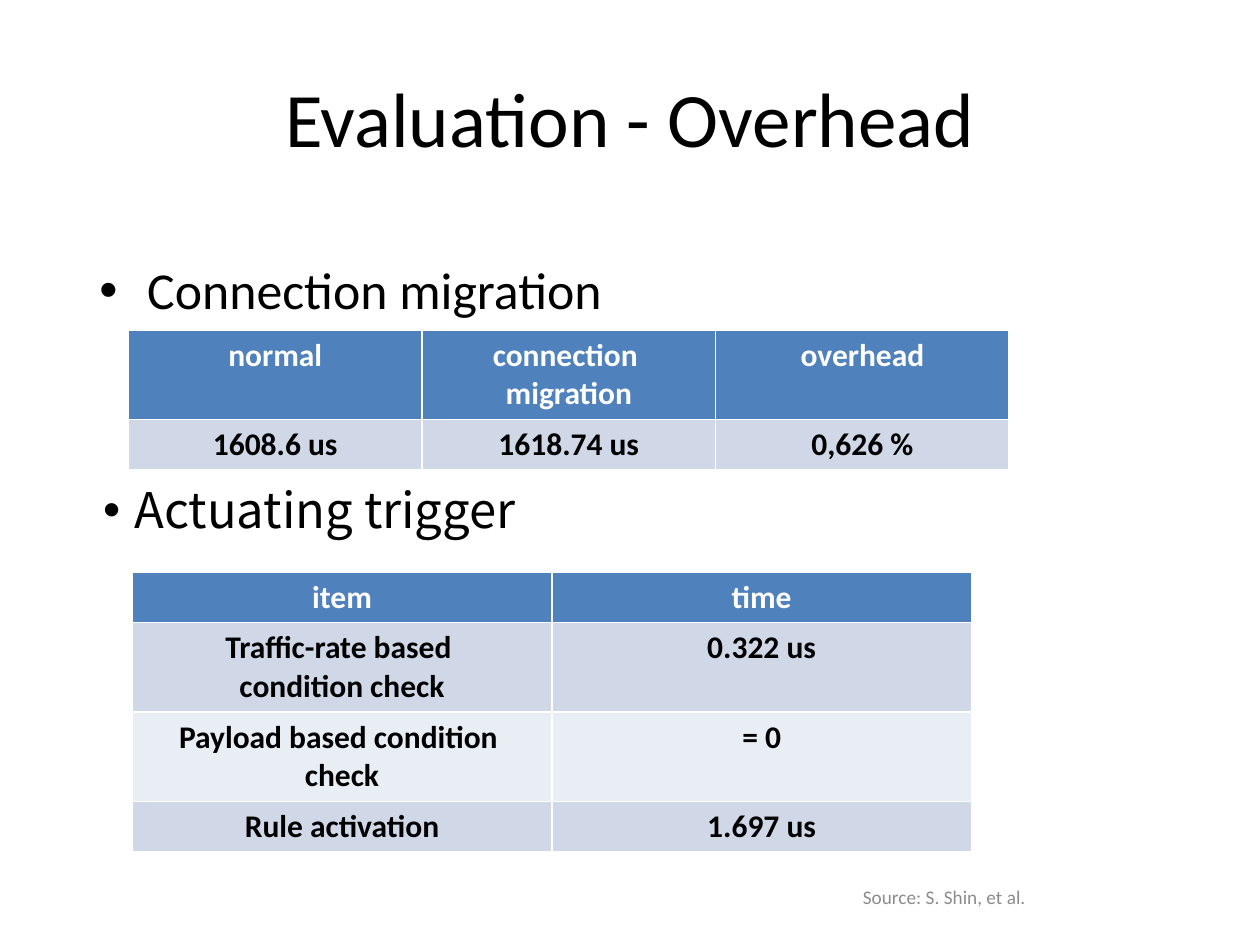
from dataclasses import dataclass

from lxml.etree import SubElement
from pptx import Presentation
from pptx.dml.color import RGBColor
from pptx.enum.text import MSO_ANCHOR as Anchor, PP_ALIGN as Align
from pptx.oxml.ns import qn
from pptx.util import Inches, Pt


@dataclass(frozen=True)
class Theme:
    font: str = "Calibri"
    trigger_font: str = "Noto Sans CJK KR"
    black: str = "000000"
    white: str = "FFFFFF"
    gray: str = "8C8C8C"
    header: str = "4F81BD"
    bands: tuple = ("D0D8E8", "E9EDF4")
    title: float = 44
    migration: float = 29.6
    trigger: float = 28
    cell: float = 18
    source: float = 11


theme = Theme()


def add_span(para, text, size, color, font=theme.font, bold=False):
    span = para.add_run()
    span.text = text
    span.font.name = font
    span.font.size = Pt(size)
    span.font.bold = bold
    span.font.color.rgb = RGBColor.from_string(color)


def add_text_box(left, top, width, height, anchor=Anchor.TOP):
    """Add a wrapping text box and return its first paragraph."""
    box = page.shapes.add_textbox(Inches(left), Inches(top), Inches(width), Inches(height))
    box.text_frame.word_wrap = True
    box.text_frame.vertical_anchor = anchor
    return box.text_frame.paragraphs[0]


deck = Presentation()
deck.slide_width, deck.slide_height = Inches(10), Inches(7.5)
page = deck.slides.add_slide(deck.slide_layouts[6])

# Title and source
para = add_text_box(0.5, 0.3, 9, 1.25, Anchor.MIDDLE)
para.alignment = Align.CENTER
add_span(para, "Evaluation - Overhead", theme.title, theme.black)

para = add_text_box(6.75, 6.92, 2.67, 0.4, Anchor.MIDDLE)
add_span(para, "Source: S. Shin, et al.", theme.source, theme.gray)

# Bulleted headings: text, left, top, indent, line spacing, size, font
headings = [
    ("Connection migration", 0.69, 2, 0.38, 1, theme.migration, theme.font),
    ("Actuating trigger", 0.72, 3.81, 0.25, 0.9, theme.trigger, theme.trigger_font),
]
for text, left, top, indent, spacing, size, font in headings:
    para = add_text_box(left, top, 7.95, 0.55)
    para.line_spacing = spacing
    properties = para._p.get_or_add_pPr()
    properties.set("marL", str(Inches(indent)))
    properties.set("indent", str(-Inches(indent)))
    SubElement(properties, qn("a:buFont"), typeface="Arial")
    SubElement(properties, qn("a:buChar"), char="•")
    add_span(para, text, size, theme.black, font)

# Tables: left, top, column width, row heights, rows of cell text
tables = [
    (1.02, 2.62, 2.33, (0.71, 0.4), [
        ("normal", "connection \nmigration", "overhead"),
        ("1608.6 us", "1618.74 us", "0,626 %"),
    ]),
    (1.05, 4.54, 3.33, (0.4, 0.71, 0.71, 0.4), [
        ("item", "time"),
        ("Traffic-rate based \ncondition check", "0.322 us"),
        ("Payload based condition \ncheck", "= 0"),
        ("Rule activation", "1.697 us"),
    ]),
]
for left, top, column_width, heights, rows in tables:
    columns = len(rows[0])
    table = page.shapes.add_table(
        len(rows), columns, Inches(left), Inches(top),
        Inches(column_width * columns), Inches(sum(heights)),
    ).table
    for column in table.columns:
        column.width = Inches(column_width)
    for row_index, (height, texts) in enumerate(zip(heights, rows)):
        table.rows[row_index].height = Inches(height)
        is_header = row_index == 0
        fill = theme.header if is_header else theme.bands[(row_index - 1) % 2]
        color = theme.white if is_header else theme.black
        for column_index, text in enumerate(texts):
            cell = table.cell(row_index, column_index)
            cell.margin_left = cell.margin_right = Inches(0.07)
            cell.fill.solid()
            cell.fill.fore_color.rgb = RGBColor.from_string(fill)
            for line_index, line in enumerate(text.split("\n")):
                frame = cell.text_frame
                para = frame.add_paragraph() if line_index else frame.paragraphs[0]
                para.alignment = Align.CENTER
                add_span(para, line, theme.cell, color, bold=True)

deck.save("out.pptx")
